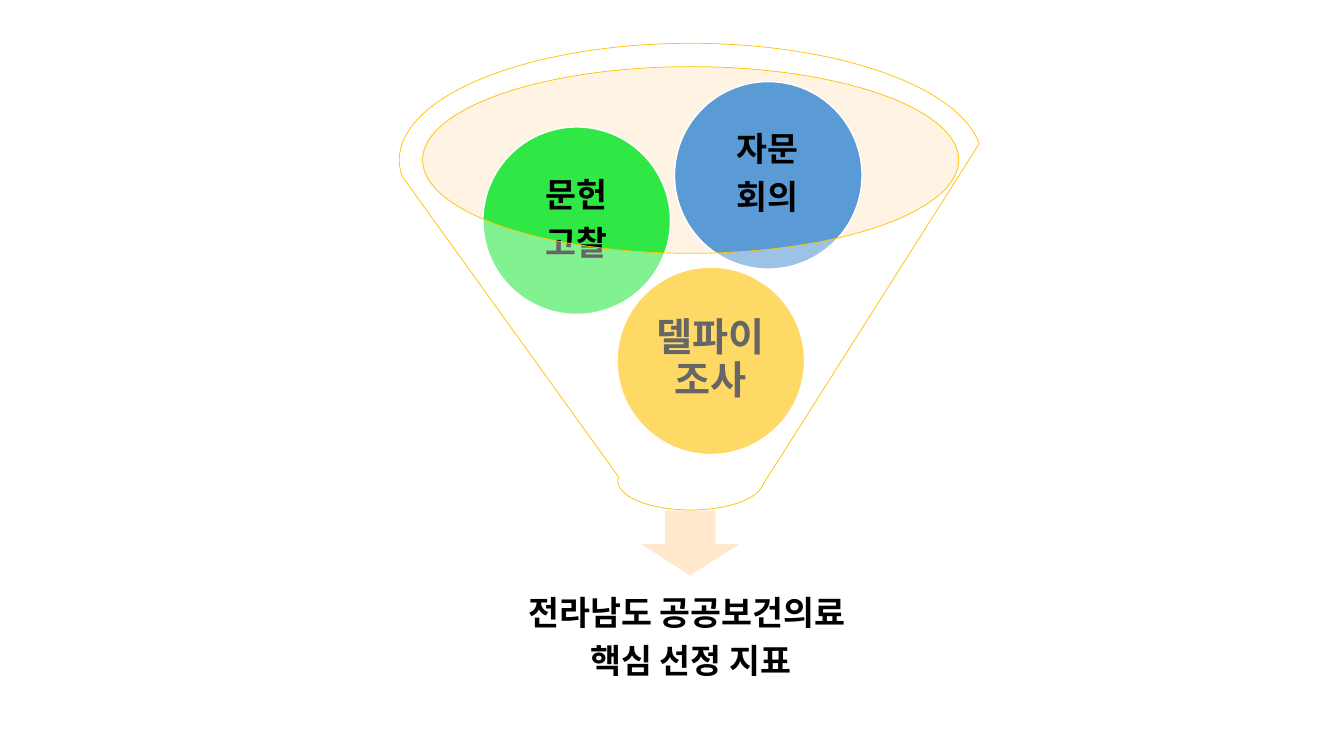
"""Build a funnel slide showing how three methods lead to the core indicators."""
from dataclasses import dataclass

from lxml import etree
from pptx import Presentation
from pptx.dml.color import RGBColor
from pptx.enum import shapes as sh, text as tx
from pptx.oxml import ns
from pptx.shapes.autoshape import Shape
from pptx.slide import Slide
from pptx.util import Inches, Pt

BLACK = RGBColor(0x00, 0x00, 0x00)
WHITE = RGBColor(0xFF, 0xFF, 0xFF)
GOLD = RGBColor(0xFF, 0xC0, 0x00)
GREEN = RGBColor(0x30, 0xE8, 0x45)
BLUE = RGBColor(0x5B, 0x9B, 0xD5)
CREAM = RGBColor(0xFF, 0xE2, 0xBD)
PEACH = RGBColor(0xFF, 0xE8, 0xCC)

BALL_SIZE = 1.86
LABEL_SIZE = 1.31
LABEL_OFFSET = 0.27


@dataclass(frozen=True)
class Box:
    left: float
    top: float
    width: float
    height: float

    def lengths(self) -> list[int]:
        return [Inches(n) for n in (self.left, self.top, self.width, self.height)]


@dataclass(frozen=True)
class Label:
    lines: tuple[str, ...]
    inset: float
    size: float = 24
    font: str = "Arial"


@dataclass(frozen=True)
class Method:
    left: float
    top: float
    color: RGBColor
    label: Label


METHODS = (
    Method(6.12, 2.65, GOLD, Label(("델파이 조사",), 0.04, 28, "Calibri")),
    Method(4.79, 1.26, GREEN, Label(("문헌", "고찰"), 0.03)),
    Method(6.69, 0.81, BLUE, Label(("자문", "회의"), 0.03)),
)
RESULT = Label(("전라남도 공공보건의료 ", "핵심 선정 지표"), 0.19)


def add_solid(slide: Slide, kind: sh.MSO_SHAPE, box: Box, fill: RGBColor,
              line: RGBColor | None = None, weight: float = 1,
              opacity: int = 100) -> Shape:
    """Add a preset shape with a flat fill and an optional outline."""
    solid = slide.shapes.add_shape(kind, *box.lengths())
    solid.shadow.inherit = False
    solid.fill.solid()
    solid.fill.fore_color.rgb = fill
    if opacity < 100:
        color = solid._element.spPr.find(ns.qn("a:solidFill"))[0]
        etree.SubElement(color, ns.qn("a:alpha"), val=str(opacity * 1000))
    if line is None:
        solid.line.fill.background()
    else:
        solid.line.color.rgb = line
        solid.line.width = Pt(weight)
    return solid


def add_label(slide: Slide, box: Box, label: Label) -> None:
    """Add centred bold text, one paragraph per line."""
    frame = slide.shapes.add_textbox(*box.lengths()).text_frame
    frame.word_wrap = True
    frame.vertical_anchor = tx.MSO_ANCHOR.MIDDLE
    frame.margin_left = frame.margin_right = Inches(label.inset)
    frame.margin_top = frame.margin_bottom = Inches(label.inset)
    frame.text = "\n".join(label.lines)
    for paragraph in frame.paragraphs:
        paragraph.alignment = tx.PP_ALIGN.CENTER
        paragraph.line_spacing = 0.9
        paragraph.space_after = Pt(label.size * 0.35)
        paragraph.font.size = Pt(label.size)
        paragraph.font.name = label.font
        paragraph.font.bold = True
        paragraph.font.color.rgb = BLACK


def add_method(slide: Slide, method: Method) -> None:
    """Add a ball with its label centred inside."""
    ball = Box(method.left, method.top, BALL_SIZE, BALL_SIZE)
    add_solid(slide, sh.MSO_SHAPE.OVAL, ball, method.color, WHITE)
    inner = Box(method.left + LABEL_OFFSET, method.top + LABEL_OFFSET,
                LABEL_SIZE, LABEL_SIZE)
    add_label(slide, inner, method.label)


def main() -> None:
    """Draw the funnel slide and save it."""
    deck = Presentation()
    deck.slide_width, deck.slide_height = Inches(13.33), Inches(7.5)
    slide = deck.slides.add_slide(deck.slide_layouts[6])

    add_solid(slide, sh.MSO_SHAPE.OVAL, Box(4.18, 0.66, 5.33, 1.85), CREAM, opacity=40)
    add_solid(slide, sh.MSO_SHAPE.DOWN_ARROW, Box(6.33, 5.06, 1.03, 0.66), PEACH, WHITE)
    add_label(slide, Box(4.37, 5.72, 4.96, 1.24), RESULT)
    for method in METHODS:
        add_method(slide, method)
    add_solid(slide, sh.MSO_SHAPE.FUNNEL, Box(3.96, 0.43, 5.78, 4.63), WHITE,
              GOLD, 0.5, opacity=40)

    deck.save("out.pptx")


if __name__ == "__main__":
    main()
